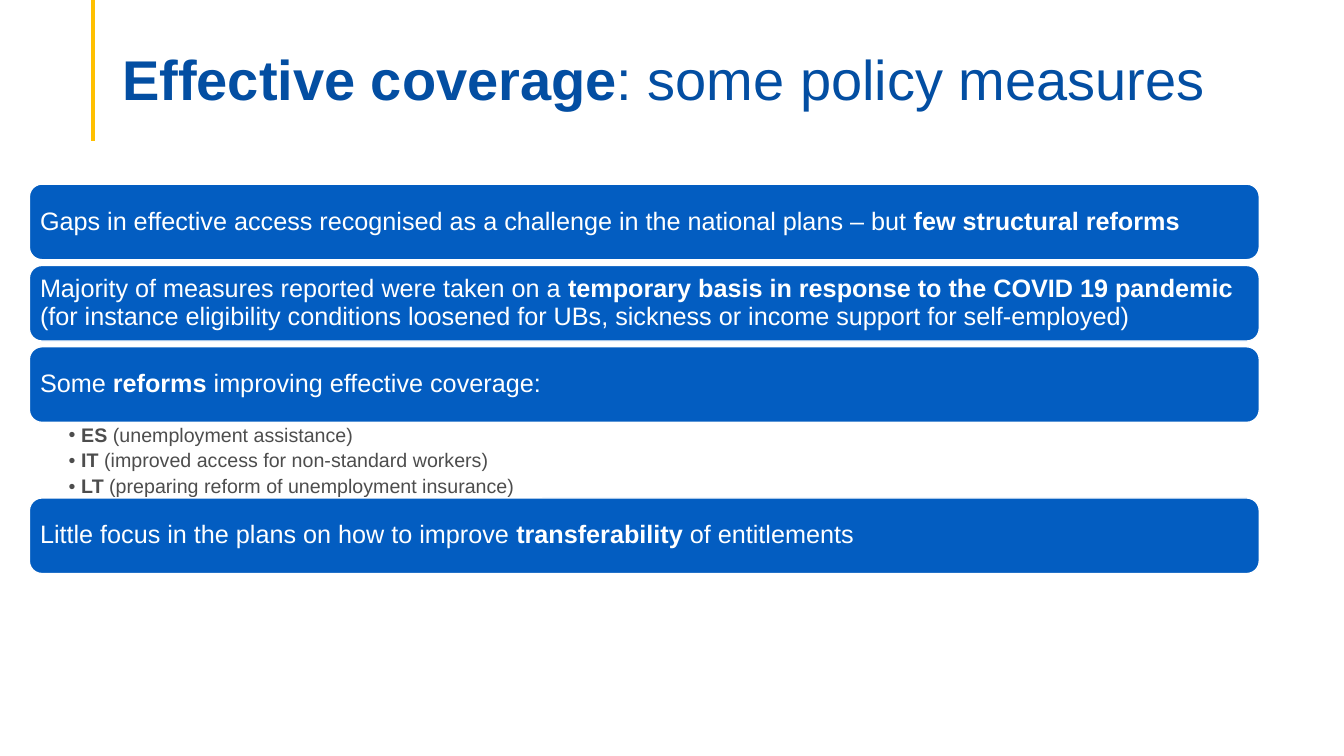
from dataclasses import dataclass

from lxml.etree import SubElement
from pptx import Presentation
from pptx.dml.color import RGBColor
from pptx.enum.shapes import MSO_CONNECTOR, MSO_SHAPE
from pptx.enum.text import MSO_ANCHOR, MSO_AUTO_SIZE, PP_ALIGN
from pptx.oxml.ns import qn
from pptx.util import Pt


@dataclass(frozen=True)
class Theme:
    """Colours, font and type sizes of the slide."""
    font: str = "Arial"
    title: RGBColor = RGBColor(0x03, 0x4E, 0xA2)
    bar: RGBColor = RGBColor(0x03, 0x5D, 0xC1)
    accent: RGBColor = RGBColor(0xFF, 0xC0, 0x00)
    white: RGBColor = RGBColor(0xFF, 0xFF, 0xFF)
    grey: RGBColor = RGBColor(0x4D, 0x4D, 0x4D)
    title_size: int = 40
    bar_size: int = 18
    list_size: int = 14


THEME = Theme()
BAR_HEIGHT = 54
BAR_GAP = 4.1
TITLE = [("Effective coverage", True), (": some policy measures", False)]
MEASURES = [
    ([("Gaps in effective access recognised as a challenge in the national plans – but ", False),
      ("few structural reforms", True)], []),
    ([("Majority of measures reported were taken on a ", False),
      ("temporary basis in response to the COVID 19 pandemic ", True),
      ("(for instance eligibility conditions loosened for UBs, "
       "sickness or income support for self-employed)", False)], []),
    ([("Some ", False), ("reforms", True), (" improving effective coverage:", False)],
     [("ES", " (unemployment assistance)"),
      ("IT", " (improved access for non-standard workers)"),
      ("LT", " (preparing reform of unemployment insurance)")]),
    ([("Little focus in the plans on how to improve ", False),
      ("transferability", True), (" of entitlements", False)], []),
]


def place(sp, x, y, w, h):
    """Move and size a shape, in points."""
    sp.left, sp.top, sp.width, sp.height = Pt(x), Pt(y), Pt(w), Pt(h)


def set_frame(tf, anchor, left, top, right, bottom):
    """Set wrapping, anchor and margins of a text frame."""
    tf.word_wrap = True
    tf.auto_size = MSO_AUTO_SIZE.NONE
    tf.vertical_anchor = anchor
    tf.margin_left, tf.margin_top = Pt(left), Pt(top)
    tf.margin_right, tf.margin_bottom = Pt(right), Pt(bottom)


def write(p, runs, size, color, align=PP_ALIGN.LEFT, after=0):
    """Fill a paragraph with plain and bold runs."""
    p.alignment = align
    p.line_spacing = 0.9
    p.space_before = Pt(0)
    p.space_after = Pt(after)
    for text, bold in runs:
        r = p.add_run()
        r.text = text
        r.font.name = THEME.font
        r.font.size = Pt(size)
        r.font.bold = bold
        r.font.color.rgb = color


def add_header(s, x, y, w, h):
    """Place the accent rule and the slide title."""
    rule = s.shapes.add_connector(MSO_CONNECTOR.STRAIGHT, Pt(x), Pt(y), Pt(x), Pt(y + h))
    rule.line.color.rgb = THEME.accent
    rule.line.width = Pt(2.25)
    SubElement(rule._element.spPr, qn("a:effectLst"))
    sp = s.shapes.title
    place(sp, x + 13.7, y + 18.7, w - 13.7, 62)
    set_frame(sp.text_frame, MSO_ANCHOR.BOTTOM, 7.2, 3.6, 7.2, 0)
    write(sp.text_frame.paragraphs[0], TITLE, THEME.title_size, THEME.title, PP_ALIGN.JUSTIFY)


def add_bar(s, runs, x, y, w, h):
    """Draw one rounded bar with its statement."""
    sp = s.shapes.add_shape(MSO_SHAPE.ROUNDED_RECTANGLE, Pt(x), Pt(y), Pt(w), Pt(h))
    sp.shadow.inherit = False
    sp.fill.solid()
    sp.fill.fore_color.rgb = THEME.bar
    sp.line.color.rgb = THEME.white
    sp.line.width = Pt(1)
    set_frame(sp.text_frame, MSO_ANCHOR.MIDDLE, 5, 5, 5, 5)
    write(sp.text_frame.paragraphs[0], runs, THEME.bar_size, THEME.white)


def add_examples(s, examples, x, y, w, h):
    """Place the bulleted country examples in the body placeholder."""
    sp = s.placeholders[1]
    place(sp, x, y, w, h)
    tf = sp.text_frame
    set_frame(tf, MSO_ANCHOR.TOP, 28, 2, 10, 2)
    for i, (country, detail) in enumerate(examples):
        p = tf.add_paragraph() if i else tf.paragraphs[0]
        p.level = 1
        pPr = p._p.get_or_add_pPr()
        pPr.set("marL", str(Pt(9)))
        pPr.set("indent", str(-Pt(9)))
        SubElement(pPr, qn("a:buChar"), char="•")
        write(p, [(country, True), (detail, False)], THEME.list_size, THEME.grey, after=3.3)


def add_measures(s, x, y, w):
    """Stack the bars, with any examples directly beneath their bar."""
    for runs, examples in MEASURES:
        add_bar(s, runs, x, y, w, BAR_HEIGHT)
        y += BAR_HEIGHT
        if examples:
            add_examples(s, examples, x, y, w, BAR_HEIGHT)
            y += BAR_HEIGHT
        else:
            y += BAR_GAP


def main():
    """Build and save the slide."""
    prs = Presentation()
    prs.slide_width, prs.slide_height = Pt(960), Pt(540)
    s = prs.slides.add_slide(prs.slide_layouts[1])
    add_header(s, 66.4, 0, 833.6, 101)
    add_measures(s, 21, 131.5, 878.5)
    prs.save("out.pptx")


if __name__ == "__main__":
    main()
